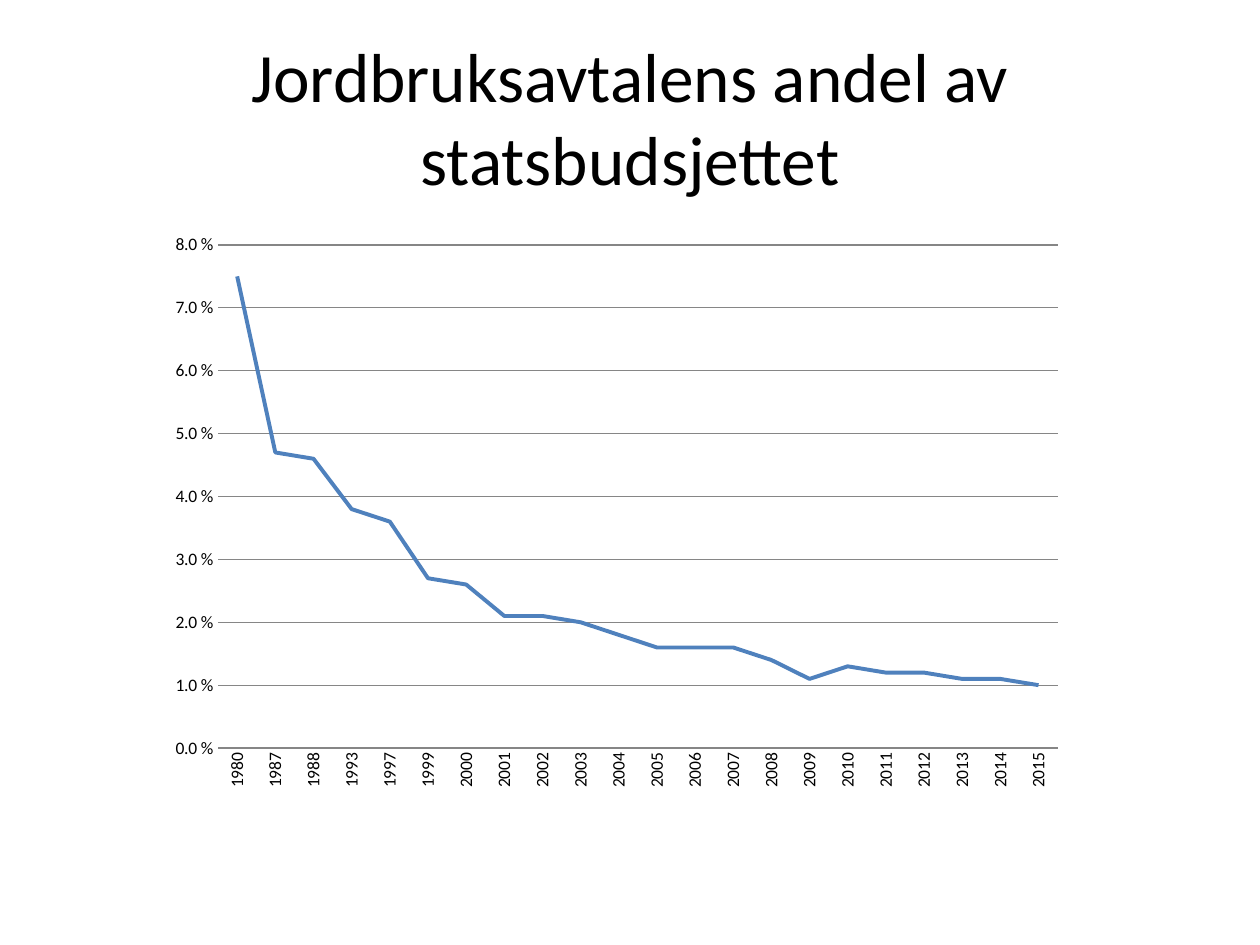
from dataclasses import dataclass

from lxml import etree
from pptx import Presentation
from pptx import util as u
from pptx.chart import data
from pptx.dml.color import RGBColor
from pptx.enum import chart as ch, text
from pptx.oxml import ns


@dataclass(frozen=True)
class Theme:
    font: str = "Calibri"
    ink: RGBColor = RGBColor(0, 0, 0)
    paper: RGBColor = RGBColor(255, 255, 255)
    grid: RGBColor = RGBColor(0x86, 0x86, 0x86)
    curve: RGBColor = RGBColor(0x4F, 0x81, 0xBD)
    title_size: float = 39.6
    axis_size: float = 10


THEME = Theme()

# Agricultural agreement as percent of the state budget
SHARES = {
    1980: 7.5, 1987: 4.7, 1988: 4.6, 1993: 3.8, 1997: 3.6, 1999: 2.7,
    2000: 2.6, 2001: 2.1, 2002: 2.1, 2003: 2.0, 2004: 1.8, 2005: 1.6,
    2006: 1.6, 2007: 1.6, 2008: 1.4, 2009: 1.1, 2010: 1.3, 2011: 1.2,
    2012: 1.2, 2013: 1.1, 2014: 1.1, 2015: 1.0,
}


def set_font(font, size):
    font.name = THEME.font
    font.size = u.Pt(size)
    font.color.rgb = THEME.ink


def set_line(line, color, width):
    line.color.rgb = color
    line.width = u.Pt(width)


def add_title(slide, wording):
    title = slide.shapes.add_textbox(
        u.Inches(0.5), u.Inches(0.3), u.Inches(9), u.Inches(1.25))
    frame = title.text_frame
    frame.word_wrap = True
    frame.vertical_anchor = text.MSO_ANCHOR.MIDDLE
    heading = frame.paragraphs[0]
    heading.alignment = text.PP_ALIGN.CENTER
    run = heading.add_run()
    run.text = wording
    set_font(run.font, THEME.title_size)


def place_plot(chart, **fractions):
    """Fix the inner plot area as fractions of the chart frame."""
    plot_area = chart.element.find(".//" + ns.qn("c:plotArea"))
    layout = plot_area.find(ns.qn("c:layout"))
    if layout is None:
        layout = etree.Element(ns.qn("c:layout"))
        plot_area.insert(0, layout)
    manual = etree.SubElement(layout, ns.qn("c:manualLayout"))
    settings = {"layoutTarget": "inner", "xMode": "edge", "yMode": "edge"}
    for tag, value in {**settings, **fractions}.items():
        etree.SubElement(manual, ns.qn("c:" + tag)).set("val", str(value))


def style_axis(axis):
    axis.major_tick_mark = axis.minor_tick_mark = ch.XL_TICK_MARK.NONE
    set_font(axis.tick_labels.font, THEME.axis_size)


def add_share_chart(slide, shares):
    budget = data.CategoryChartData(number_format="0.0\\ %")
    budget.categories = [str(year) for year in shares]
    budget.add_series("Series 1", [round(s / 100, 3) for s in shares.values()])
    chart = slide.shapes.add_chart(
        ch.XL_CHART_TYPE.LINE, u.Inches(1.25), u.Inches(1.78),
        u.Inches(7.29), u.Inches(4.57), budget).chart
    chart.has_legend = chart.has_title = False
    set_font(chart.font, THEME.axis_size)
    place_plot(chart, x=0.066, y=0.036, w=0.914, h=0.874)

    # Years, read upwards
    years = chart.category_axis
    style_axis(years)
    years.has_major_gridlines = False
    set_line(years.format.line, THEME.grid, 0.75)
    label_body = years.tick_labels.font._element.getparent().getparent()
    years_text = years._element.find(ns.qn("c:txPr"))
    label_body = years_text.find(ns.qn("a:bodyPr"))
    label_body.set("rot", "-5400000")
    label_body.set("vert", "horz")

    # Percent scale
    percent = chart.value_axis
    style_axis(percent)
    percent.minimum_scale, percent.maximum_scale = 0, 0.08
    percent.major_unit = 0.01
    percent.tick_labels.number_format = "0.0\\ %"
    percent.tick_labels.number_format_is_linked = False
    percent.format.line.fill.background()
    percent.has_major_gridlines = True
    set_line(percent.major_gridlines.format.line, THEME.grid, 0.75)

    # Share curve
    chart.plots[0].vary_by_categories = False
    curve = chart.plots[0].series[0]
    curve.smooth = False
    curve.marker.style = ch.XL_MARKER_STYLE.NONE
    set_line(curve.format.line, THEME.curve, 2.25)


def main():
    deck = Presentation()
    deck.slide_width, deck.slide_height = u.Inches(10), u.Inches(7.5)
    slide = deck.slides.add_slide(deck.slide_layouts[6])
    slide.background.fill.solid()
    slide.background.fill.fore_color.rgb = THEME.paper
    add_title(slide, "Jordbruksavtalens andel av statsbudsjettet")
    add_share_chart(slide, SHARES)
    deck.save("out.pptx")


if __name__ == "__main__":
    main()
